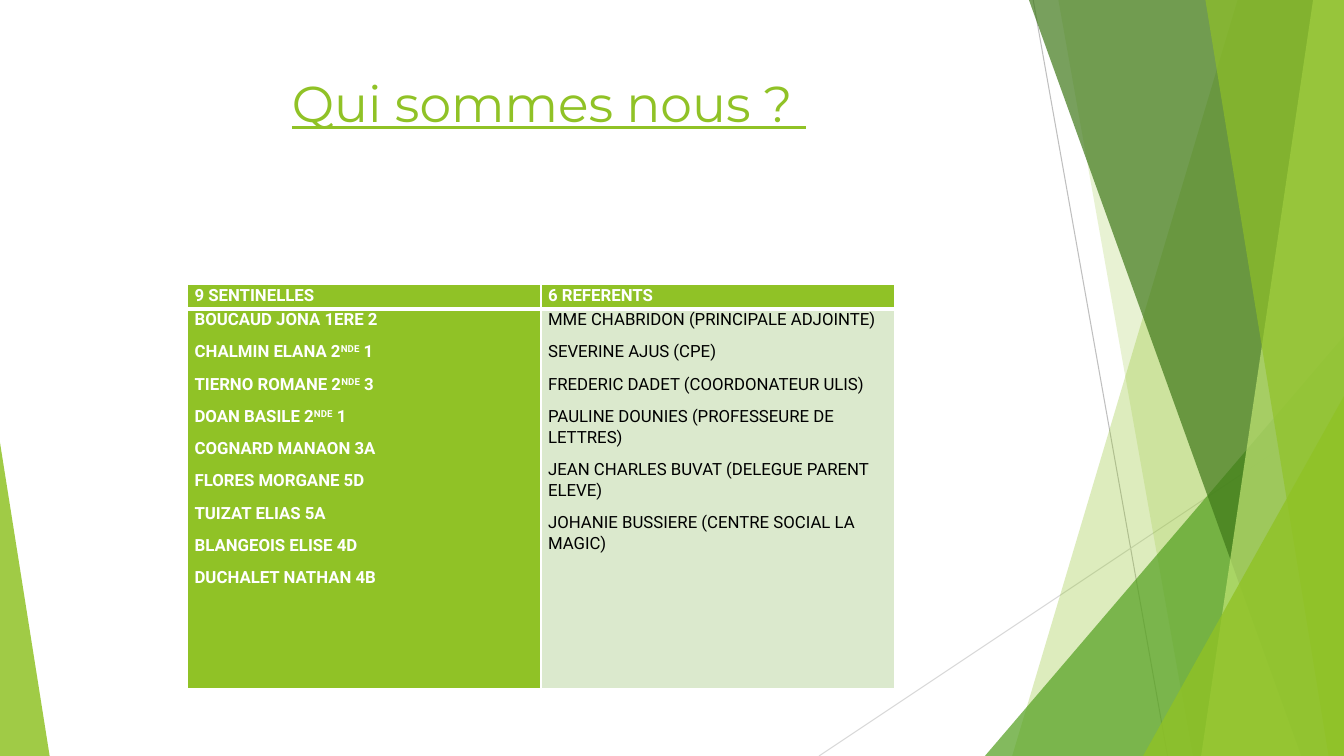
from dataclasses import dataclass
from typing import Any

from lxml.etree import SubElement
from pptx import Presentation
from pptx.dml.color import RGBColor
from pptx.enum.shapes import MSO_CONNECTOR, MSO_SHAPE
from pptx.enum.text import MSO_ANCHOR as Anchor, MSO_AUTO_SIZE as AutoSize, PP_ALIGN as Align
from pptx.oxml.ns import qn
from pptx.util import Pt

WIDTH, HEIGHT = 960, 540


@dataclass(frozen=True)
class Theme:
    green: str = "90C226"
    leaf: str = "54A021"
    forest: str = "3F7819"
    lime: str = "C0E474"
    pale: str = "DBE9CD"
    white: str = "FFFFFF"
    black: str = "000000"
    title_font: str = "Montserrat"
    body_font: str = "Roboto"
    title_size: int = 36
    body_size: int = 12


THEME = Theme()


@dataclass(frozen=True)
class Ray:
    start: tuple[float, float]
    end: tuple[float, float]
    color: str


@dataclass(frozen=True)
class Band:
    """A facet with a slanted left edge that reaches the right edge of the page."""
    top_x: float
    bottom_x: float
    color: str
    opacity: int


@dataclass(frozen=True)
class Wedge:
    """A right triangle standing on the bottom of the page."""
    left: float
    top: float
    width: float
    apex: int
    color: str
    opacity: int


@dataclass(frozen=True)
class Column:
    heading: str
    members: tuple[str, ...]
    fill: str
    color: str
    bold: bool


RAYS = [
    Ray((738, 0), (834, HEIGHT), "BFBFBF"),
    Ray((WIDTH, 290), (585, HEIGHT), "D9D9D9"),
]
FACETS = [
    Band(884, 723, THEME.green, 30),
    Band(756, 852, THEME.green, 20),
    Wedge(703.5, 240, 256.5, 1, THEME.leaf, 72),
    Band(735, 929.5, THEME.forest, 70),
    Band(938, 858, THEME.lime, 70),
    Band(861, 949, THEME.green, 65),
    Wedge(816.5, 283, 143.5, 1, THEME.green, 80),
    Wedge(0, 316, 35.5, 0, THEME.green, 85),
]
# Text between carets is superscript.
COLUMNS = [
    Column("9 SENTINELLES", (
        "BOUCAUD JONA 1ERE 2",
        "CHALMIN ELANA 2^NDE^ 1",
        "TIERNO ROMANE 2^NDE^ 3",
        "DOAN BASILE 2^NDE^ 1",
        "COGNARD MANAON 3A",
        "FLORES MORGANE 5D",
        "TUIZAT ELIAS 5A",
        "BLANGEOIS ELISE 4D",
        "DUCHALET NATHAN 4B",
    ), THEME.green, THEME.white, True),
    Column("6 REFERENTS", (
        "MME CHABRIDON (PRINCIPALE ADJOINTE)",
        "SEVERINE AJUS (CPE)",
        "FREDERIC DADET (COORDONATEUR ULIS)",
        "PAULINE DOUNIES (PROFESSEURE DE LETTRES)",
        "JEAN CHARLES BUVAT (DELEGUE PARENT ELEVE)",
        "JOHANIE BUSSIERE (CENTRE SOCIAL LA MAGIC)",
    ), THEME.pale, THEME.black, False),
]


def rgb(color: str) -> RGBColor:
    return RGBColor.from_string(color)


def apply(target: Any, values: dict[str, Any]) -> None:
    for name, value in values.items():
        setattr(target, name, value)


def draw_ray(page: Any, ray: Ray) -> None:
    ends = [Pt(value) for value in ray.start + ray.end]
    connector = page.shapes.add_connector(MSO_CONNECTOR.STRAIGHT, *ends)
    connector.line.color.rgb = rgb(ray.color)
    connector.line.width = Pt(0.75)
    SubElement(connector.element.spPr, qn("a:effectLst"))


def draw_facet(page: Any, facet: Band | Wedge) -> None:
    if isinstance(facet, Band):
        corners = [(WIDTH, 0), (WIDTH, HEIGHT), (facet.bottom_x, HEIGHT)]
        builder = page.shapes.build_freeform(Pt(facet.top_x), 0)
        builder.add_line_segments([(Pt(x), Pt(y)) for x, y in corners])
        shape = builder.convert_to_shape()
    else:
        shape = page.shapes.add_shape(
            MSO_SHAPE.ISOSCELES_TRIANGLE, Pt(facet.left), Pt(facet.top),
            Pt(facet.width), Pt(HEIGHT - facet.top))
        shape.adjustments[0] = facet.apex
    shape.shadow.inherit = False
    shape.line.fill.background()
    shape.fill.solid()
    shape.fill.fore_color.rgb = rgb(facet.color)
    fill_color = shape.element.xpath(".//a:solidFill/a:srgbClr")[0]
    SubElement(fill_color, qn("a:alpha")).set("val", str(facet.opacity * 1000))


def write_title(page: Any, text: str) -> None:
    title = page.shapes.title
    title.element.getparent().append(title.element)
    apply(title, dict(left=Pt(53.5), top=Pt(48), width=Pt(677), height=Pt(104)))
    apply(title.text_frame, dict(text=text, word_wrap=True, auto_size=AutoSize.NONE,
                                 vertical_anchor=Anchor.TOP))
    para = title.text_frame.paragraphs[0]
    para.alignment = Align.CENTER
    font = para.runs[0].font
    apply(font, dict(name=THEME.title_font, size=Pt(THEME.title_size), underline=True))
    font.color.rgb = rgb(THEME.green)


def set_borders(cell: Any, widths: dict[str, float]) -> None:
    properties = cell._tc.get_or_add_tcPr()
    for side, width in widths.items():
        line = SubElement(properties, qn(f"a:ln{side}"), w=str(Pt(width)))
        SubElement(SubElement(line, qn("a:solidFill")), qn("a:srgbClr"), val=THEME.white)


def fill_cell(cell: Any, lines: tuple[str, ...], fill: str, color: str, bold: bool) -> None:
    apply(cell, dict(margin_left=Pt(5), margin_right=Pt(5), margin_top=0, margin_bottom=0,
                     vertical_anchor=Anchor.TOP))
    cell.fill.solid()
    cell.fill.fore_color.rgb = rgb(fill)
    frame = cell.text_frame
    for index, line in enumerate(lines):
        para = frame.add_paragraph() if index else frame.paragraphs[0]
        apply(para, dict(line_spacing=1.07, space_after=Pt(8)))
        for part, text in enumerate(line.split("^")):
            span = para.add_run()
            span.text = text
            apply(span.font, dict(name=THEME.body_font, size=Pt(THEME.body_size), bold=bold))
            span.font.color.rgb = rgb(color)
            if part % 2:
                span._r.get_or_add_rPr().set("baseline", "30000")


def draw_members(page: Any) -> None:
    frame = page.shapes.add_table(2, len(COLUMNS), Pt(134), Pt(203.5), Pt(505), Pt(288.5))
    table = frame.table
    for row, height in zip(table.rows, (17, 271.5)):
        row.height = Pt(height)
    for index, column in enumerate(COLUMNS):
        table.columns[index].width = Pt(252.5)
        heading, body = table.cell(0, index), table.cell(1, index)
        set_borders(heading, dict(L=1, R=1, T=1, B=3))
        set_borders(body, dict(L=1, R=1, T=3, B=1))
        fill_cell(heading, (column.heading,), THEME.green, THEME.white, True)
        fill_cell(body, column.members, column.fill, column.color, column.bold)


def main() -> None:
    deck = Presentation()
    apply(deck, dict(slide_width=Pt(WIDTH), slide_height=Pt(HEIGHT)))
    page = deck.slides.add_slide(deck.slide_layouts[5])
    for ray in RAYS:
        draw_ray(page, ray)
    for facet in FACETS:
        draw_facet(page, facet)
    write_title(page, "Qui sommes nous ? ")
    draw_members(page)
    deck.save("out.pptx")


if __name__ == "__main__":
    main()
